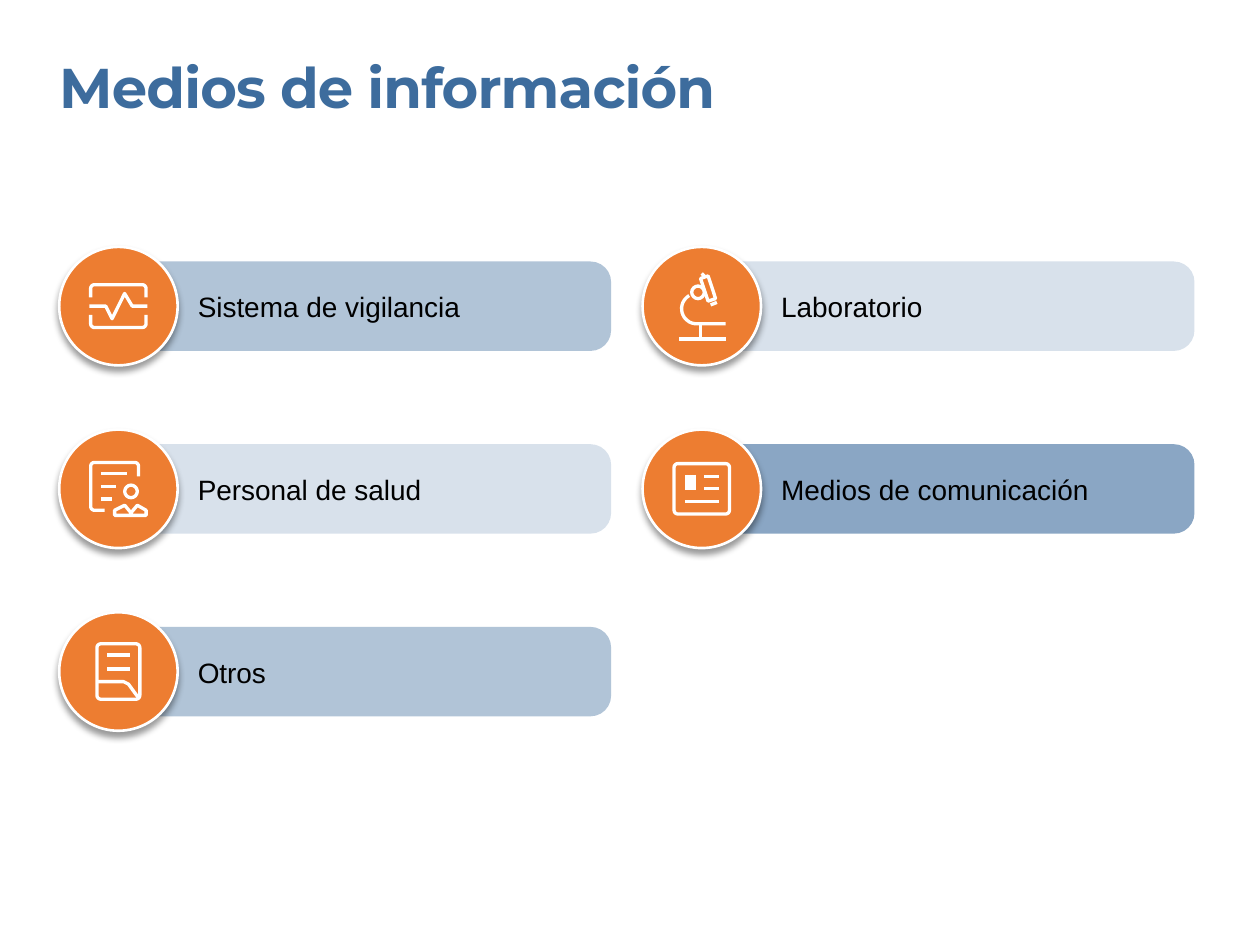
from math import cos, radians, sin

from lxml.etree import SubElement
from pptx import Presentation
from pptx.dml.color import RGBColor
from pptx.enum.shapes import MSO_SHAPE
from pptx.enum.text import MSO_ANCHOR, MSO_AUTO_SIZE, PP_ALIGN
from pptx.oxml.ns import qn
from pptx.util import Inches, Pt

COLORS = {"blue": "3D6C9D", "orange": "ED7D31", "white": "FFFFFF", "black": "000000"}
TITLE = "Medios de información"
# text, column, row, bar opacity in percent, icon
ITEMS = [
    ("Sistema de vigilancia", 0, 0, 40, "monitor"),
    ("Personal de salud", 0, 1, 20, "staff"),
    ("Otros", 0, 2, 40, "page"),
    ("Laboratorio", 1, 0, 20, "microscope"),
    ("Medios de comunicación", 1, 1, 60, "newspaper"),
]
FIRST_X, FIRST_Y = 0.94, 2.43
COLUMN_STEP, ROW_STEP = 4.63, 1.45
BAR_WIDTH, BAR_HEIGHT, DISC = 3.91, 0.71, 0.94


def arc(x, y, radius, start, end, steps=16):
    """Points from start to end degrees, clockwise from the right."""
    angles = [radians(start + (end - start) * i / steps) for i in range(steps + 1)]
    return [(x + radius * cos(a), y + radius * sin(a)) for a in angles]


def box(half_width, half_height, radius=3):
    """Closed rounded box around the icon centre."""
    points = []
    for quarter, (x, y) in enumerate([(1, 1), (-1, 1), (-1, -1), (1, -1)]):
        points += arc(x * (half_width - radius), y * (half_height - radius), radius,
                      quarter * 90, quarter * 90 + 90, 4)
    return points + points[:1]


def dash(left, right, y):
    return [(left, y), (right, y)]


def bracket(side):
    """Upper (-1) or lower (1) half of the monitor frame."""
    half = [point for point in box(22, 17) if point[1] < -7]
    return [(x, -side * y) for x, y in [(-22, -7), *half, (22, -7)]]


# Stroke paths in hundredths of an inch from the disc centre
ICONS = {
    "monitor": [
        bracket(-1), bracket(1),
        [(-23, 0), (-10, 0), (-5, 10), (5, -10), (11, 0), (23, 0)],
    ],
    "staff": [
        arc(10, 2, 5, 0, 360),
        [(-3, 21), (-3, 17), (5, 13), (10, 19), (15, 13), (22, 17), (22, 21), (-3, 21)],
        [(-11, 17), *arc(-19, 14, 3, 90, 180, 4), *arc(-19, -18, 3, 180, 270, 4),
         *arc(13, -18, 3, 270, 360, 4), (16, -10)],
        dash(-14, 7, -12), dash(-14, -2, -2), dash(-14, -5, 8),
    ],
    "page": [
        box(17, 22),
        [(-17, 8), (4, 8), (8, 10), (16, 21)],
        dash(-9, 9, -13), dash(-9, 9, -2),
    ],
    "microscope": [
        dash(-18, 19, 26), [(-1, 26), (-1, 14)],
        [(19, 14), *arc(-4, 2, 12, 90, 240)],
        arc(-3, -11, 5, 0, 360),
        [(-1, -22), (5, -24), (11, -6), (5, -4), (-1, -22)],
        [(0, -26), (3, -23)], [(7, -1), (12, -3)],
    ],
    "newspaper": [
        box(22, 20),
        *[[(x, -11), (x, 1)] for x in range(-12, -4, 2)],
        dash(-13, 14, 10), dash(2, 14, 0), dash(2, 14, -10),
    ],
}


def paint(shape, fill=None, line=None, line_width=0):
    shape.shadow.inherit = False
    for part, color in ((shape.fill, fill), (shape.line.fill, line)):
        if color:
            part.solid()
            part.fore_color.rgb = RGBColor.from_string(COLORS[color])
        else:
            part.background()
    if line:
        shape.line.width = Pt(line_width)


def set_alpha(color_element, percent):
    SubElement(color_element, qn("a:alpha"), val=str(percent * 1000))


def add_bar(slide, x, y, opacity):
    bar = slide.shapes.add_shape(
        MSO_SHAPE.ROUNDED_RECTANGLE, Inches(x), Inches(y - BAR_HEIGHT / 2),
        Inches(BAR_WIDTH), Inches(BAR_HEIGHT))
    bar.adjustments[0] = 0.23
    paint(bar, fill="blue")
    set_alpha(bar._element.spPr.find(qn("a:solidFill"))[0], opacity)


def add_disc(slide, x, y):
    disc = slide.shapes.add_shape(
        MSO_SHAPE.OVAL, Inches(x - DISC / 2), Inches(y - DISC / 2), Inches(DISC), Inches(DISC))
    paint(disc, fill="orange", line="white", line_width=1.5)
    effects = disc._element.spPr.find(qn("a:effectLst"))
    shadow = SubElement(effects, qn("a:outerShdw"), blurRad=str(Pt(4)), dist=str(Pt(3)),
                        dir="5400000", rotWithShape="0")
    set_alpha(SubElement(shadow, qn("a:srgbClr"), val=COLORS["black"]), 40)


def add_icon(slide, x, y, strokes):
    """Draw all strokes as one shape, in thousandths of an inch."""
    strokes = [[(px * 10, py * 10) for px, py in stroke] for stroke in strokes]
    builder = slide.shapes.build_freeform(*strokes[0][0], scale=Inches(1) / 1000)
    for stroke in strokes:
        builder.move_to(*stroke[0])
        builder.add_line_segments(stroke[1:], close=False)
    paint(builder.convert_to_shape(Inches(x), Inches(y)), line="white", line_width=1.9)


def write(shape, text, font_name, size, color, bold=False):
    frame = shape.text_frame
    frame.margin_left = frame.margin_right = frame.margin_top = frame.margin_bottom = 0
    frame.word_wrap = True
    frame.auto_size = MSO_AUTO_SIZE.NONE
    frame.vertical_anchor = MSO_ANCHOR.TOP
    paragraph = frame.paragraphs[0]
    paragraph.text = text
    paragraph.alignment = PP_ALIGN.LEFT
    font = paragraph.font
    font.name, font.size, font.bold = font_name, Pt(size), bold
    font.color.rgb = RGBColor.from_string(COLORS[color])
    return paragraph


def main():
    presentation = Presentation()
    presentation.slide_width, presentation.slide_height = Inches(10), Inches(7.5)
    slide = presentation.slides.add_slide(presentation.slide_layouts[5])

    title = slide.shapes.title
    title.left, title.top = Inches(0.47), Inches(0.42)
    title.width, title.height = Inches(8.55), Inches(0.54)
    paragraph = write(title, TITLE, "Montserrat", 32, "blue", bold=True)
    paragraph.runs[0]._r.get_or_add_rPr().set("spc", "-50")

    for text, column, row, opacity, icon in ITEMS:
        x = FIRST_X + column * COLUMN_STEP
        y = FIRST_Y + row * ROW_STEP
        add_bar(slide, x, y, opacity)
        add_disc(slide, x, y)
        add_icon(slide, x, y, ICONS[icon])
        label = slide.shapes.add_textbox(
            Inches(x + 0.63), Inches(y - 0.13), Inches(3), Inches(0.27))
        write(label, text, "Arial", 16, "black")

    presentation.save("out.pptx")


if __name__ == "__main__":
    main()
